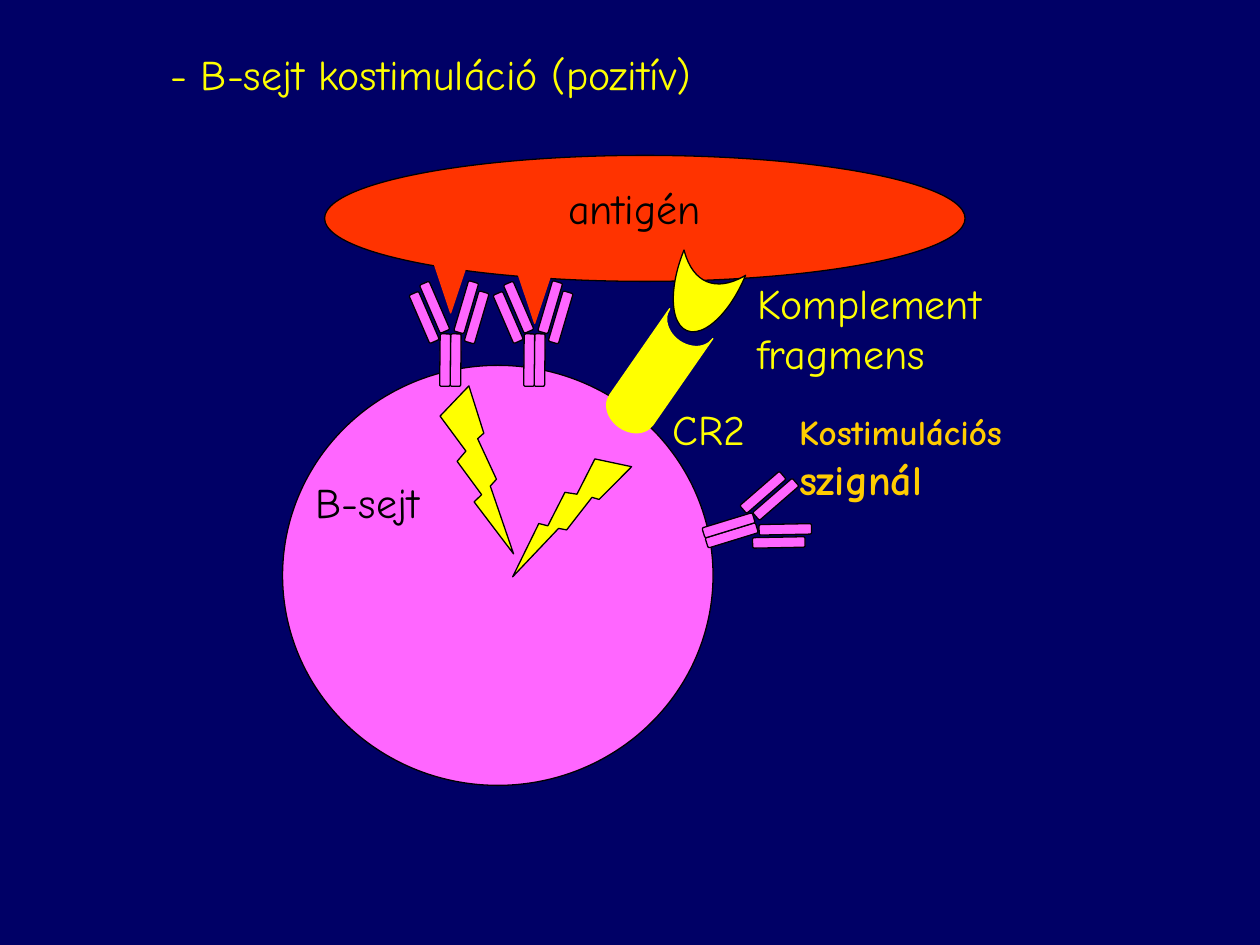
from dataclasses import dataclass
from math import cos, radians, sin

from pptx import Presentation
from pptx.dml.color import RGBColor
from pptx.enum import shapes, text
from pptx.util import Pt

PRESET = shapes.MSO_SHAPE


@dataclass(frozen=True)
class Theme:
    font: str = "Comic Neue"
    background: str = "000066"
    outline: str = "000000"
    cell: str = "FF66FF"
    antigen: str = "FF3300"
    signal: str = "FFFF00"
    costimulation: str = "FFCC00"
    text_size: int = 24
    small_size: int = 20
    line_width: float = 0.75


class Diagram:
    """Draws on the current slide in one style, with lengths in points."""

    # Bar centres from the joint of an upright antibody, and bar angles
    ANTIBODY_BARS = (
        (-9, -14.4, -23.4), (9, -14.4, 16.5),
        (-15, -8.6, -23.4), (15, -8.6, 16.5),
        (3, 15.8, 0.6), (-3, 15.8, 0.6),
    )
    BAR_WIDTH, BAR_HEIGHT = 6, 30

    def __init__(self, slide, theme):
        self.slide = slide
        self.theme = theme
        fill = slide.background.fill
        fill.solid()
        fill.fore_color.rgb = RGBColor.from_string(theme.background)

    def shape(self, preset, box, fill, line=None, rotation=0, adjustment=None):
        shape = self.slide.shapes.add_shape(preset, *map(Pt, box))
        shape.shadow.inherit = False
        shape.fill.solid()
        shape.fill.fore_color.rgb = RGBColor.from_string(fill)
        shape.line.color.rgb = RGBColor.from_string(line or self.theme.outline)
        shape.line.width = Pt(self.theme.line_width)
        shape.rotation = rotation
        if adjustment is not None:
            shape.adjustments[0] = adjustment
        return shape

    def antibody(self, joint_x, joint_y, turn=0):
        """Draw a Y of six bars, turned clockwise about its joint."""
        cosine, sine = cos(radians(turn)), sin(radians(turn))
        for x, y, angle in self.ANTIBODY_BARS:
            left = joint_x + x * cosine - y * sine - self.BAR_WIDTH / 2
            top = joint_y + x * sine + y * cosine - self.BAR_HEIGHT / 2
            self.shape(PRESET.ROUNDED_RECTANGLE,
                       (left, top, self.BAR_WIDTH, self.BAR_HEIGHT),
                       self.theme.cell, rotation=angle + turn)

    def format_text(self, frame, color, bold=False):
        frame.word_wrap = True
        frame.auto_size = text.MSO_AUTO_SIZE.NONE
        frame.vertical_anchor = text.MSO_ANCHOR.TOP
        for run in frame.paragraphs[0].runs:
            font = run.font
            font.name = self.theme.font
            font.size = font.size or Pt(self.theme.text_size)
            font.bold = bold
            font.color.rgb = RGBColor.from_string(color)

    def title(self, wording, box):
        title = self.slide.shapes.title
        title.left, title.top, title.width, title.height = map(Pt, box)
        title.text_frame.text = wording
        title.text_frame.paragraphs[0].alignment = text.PP_ALIGN.CENTER
        self.format_text(title.text_frame, self.theme.signal)

    def label(self, wording, box, color):
        frame = self.slide.shapes.add_textbox(*map(Pt, box)).text_frame
        frame.text = wording
        self.format_text(frame, color)

    def emphasis(self, small, large, box, color):
        """Write a bold label whose first part is set in the small size."""
        frame = self.slide.shapes.add_textbox(*map(Pt, box)).text_frame
        frame.text = small
        paragraph = frame.paragraphs[0]
        paragraph.runs[0].font.size = Pt(self.theme.small_size)
        paragraph.add_run().text = large
        self.format_text(frame, color, bold=True)


def main():
    presentation = Presentation()
    presentation.slide_width, presentation.slide_height = Pt(720), Pt(540)
    slide = presentation.slides.add_slide(presentation.slide_layouts[5])
    theme = Theme()
    diagram = Diagram(slide, theme)

    diagram.title("- B-sejt kostimuláció (pozitív)", (42, 24, 408, 36))

    diagram.shape(PRESET.OVAL, (161.5, 208.8, 246, 240), theme.cell)
    diagram.label("B-sejt", (173.5, 268.8, 150, 36), theme.outline)

    diagram.antibody(257.4, 190)
    diagram.antibody(305.4, 190)
    diagram.antibody(432.3, 298.3, turn=72.4)

    diagram.shape(PRESET.OVAL, (185.5, 88.8, 366, 72), theme.antigen)
    for left, top in ((245.5, 142.8), (293.5, 148.8)):
        diagram.shape(PRESET.ISOSCELES_TRIANGLE, (left, top, 24, 36),
                      theme.antigen, line=theme.antigen, rotation=180)
    diagram.label("antigén", (317.5, 100.8, 156, 36), theme.outline)

    diagram.shape(PRESET.MOON, (379.5, 150.5, 42, 38), theme.signal,
                  rotation=292.3, adjustment=0.72)
    diagram.label("Komplement fragmens", (425.5, 154.8, 156, 65), theme.signal)
    diagram.shape(PRESET.FLOWCHART_STORED_DATA, (338.5, 199.5, 72, 30),
                  theme.signal, line=theme.signal, rotation=304.8)
    diagram.label("CR2", (377.5, 226.8, 102, 36), theme.signal)

    diagram.shape(PRESET.LIGHTNING_BOLT, (251.5, 220.5, 42, 96), theme.signal)
    diagram.shape(PRESET.LIGHTNING_BOLT, (305.5, 247, 36, 90), theme.signal,
                  rotation=60.9)
    diagram.emphasis("Kostimulációs", " szignál", (449.5, 226.8, 162, 65),
                     theme.costimulation)

    presentation.save("out.pptx")


if __name__ == "__main__":
    main()
